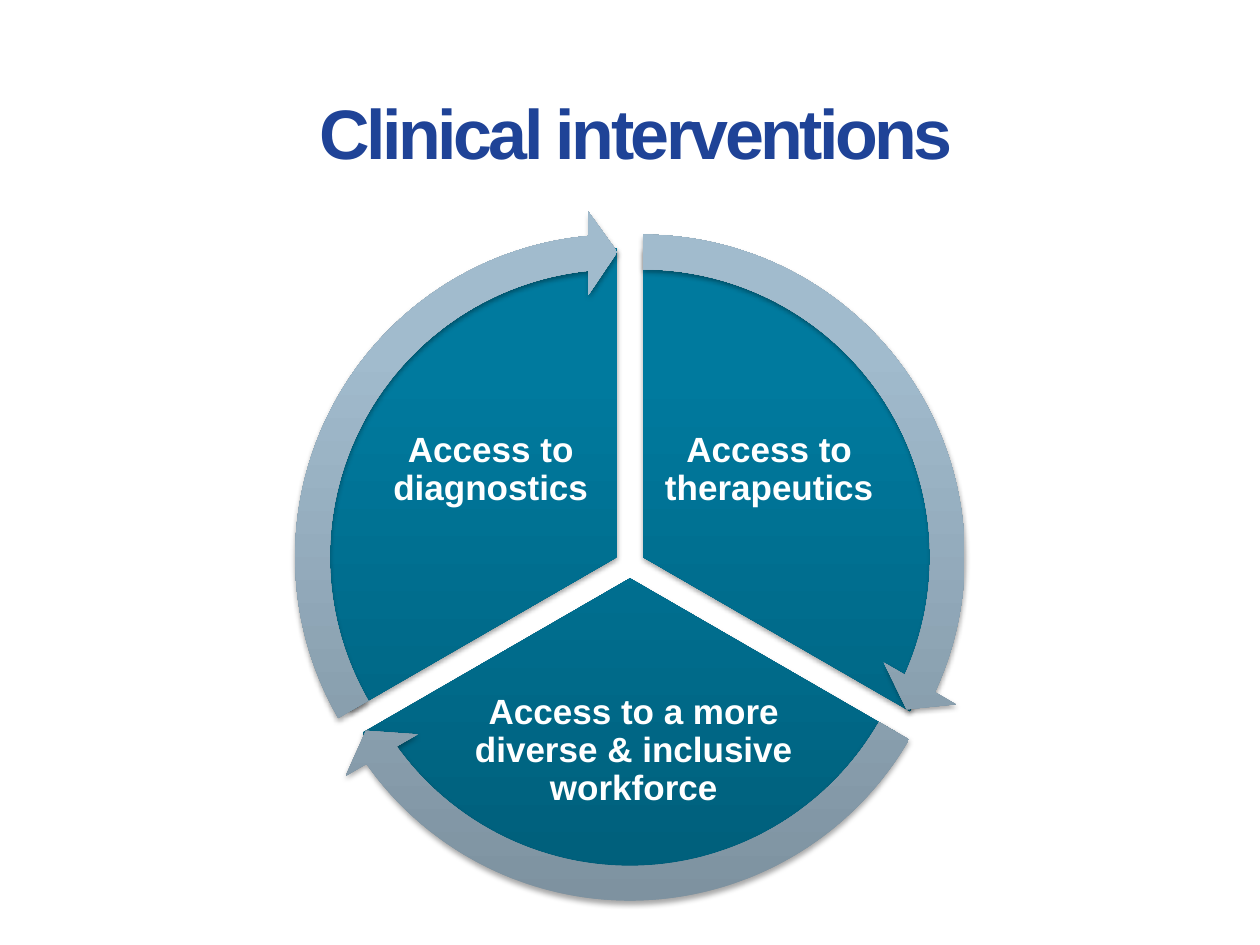
import pptx
import pptx.dml.color
import pptx.enum.shapes
import pptx.enum.text
import pptx.oxml
import pptx.util

Inches, Pt = pptx.util.Inches, pptx.util.Pt
SHAPE = pptx.enum.shapes.MSO_SHAPE
ANCHOR = pptx.enum.text.MSO_ANCHOR
NS = 'xmlns:a="http://schemas.openxmlformats.org/drawingml/2006/main"'

COLORS = {"title": "1F4397", "label": "FFFFFF", "shadow": "000000"}
GRADIENTS = {
    "sector": [(0, "005E7A"), (80, "007A9E"), (100, "007B9F")],
    "arrow": [(0, "7C909E"), (80, "A1BBCD"), (100, "A1BCCF")],
}
TITLE = ("Clinical interventions", (0.08, 0.72, 9.84, 0.69))
# label, label area, centre of the sector, start and end angle in degrees
SECTORS = [
    ("Access to therapeutics", (5.23, 3, 1.75, 1.46), (5.1, 4.42), 270, 30),
    ("Access to a more diverse & inclusive workforce",
     (3.72, 5.32, 2.62, 1.28), (5, 4.59), 30, 150),
    ("Access to diagnostics", (3.02, 3, 1.75, 1.46), (4.9, 4.42), 150, 270),
]
SECTOR_SIZE, ARROW_SIZE = 4.9, 5.5
ARROW_BAND, ARROW_HEAD, HEAD_ANGLE = 0.05, 0.06, 5.46


def angle_value(degrees):
    """Turn degrees into the scale of shape adjustments."""
    return degrees * 0.6


def add_round(shapes, kind, centre, size, adjustments, stops):
    """Add a square-framed shape with an upward gradient and a soft shadow."""
    left, top = (middle - size / 2 for middle in centre)
    shape = shapes.add_shape(kind, Inches(left), Inches(top), Inches(size), Inches(size))
    for index, value in enumerate(adjustments):
        shape.adjustments[index] = value
    shape.line.fill.background()
    shape.shadow.inherit = False
    marks = "".join(f'<a:gs pos="{place * 1000}"><a:srgbClr val="{color}"/></a:gs>'
                    for place, color in stops)
    properties = shape.element.spPr
    properties.insert(2, pptx.oxml.parse_xml(
        f'<a:gradFill {NS} rotWithShape="1"><a:gsLst>{marks}</a:gsLst>'
        '<a:lin ang="16200000" scaled="0"/></a:gradFill>'))
    properties[-1].append(pptx.oxml.parse_xml(
        f'<a:outerShdw {NS} blurRad="{Pt(3.1)}" dist="{Pt(1.8)}" dir="5400000" '
        f'rotWithShape="0"><a:srgbClr val="{COLORS["shadow"]}"><a:alpha val="35000"/>'
        '</a:srgbClr></a:outerShdw>'))


def add_text(shapes, text, area, size, color, anchor, margins, spacing):
    box = shapes.add_textbox(*map(Inches, area))
    frame = box.text_frame
    side, edge = map(Inches, margins)
    settings = {"word_wrap": True, "vertical_anchor": anchor, "margin_left": side,
                "margin_right": side, "margin_top": edge, "margin_bottom": edge}
    for name, value in settings.items():
        setattr(frame, name, value)
    para = frame.paragraphs[0]
    para.alignment = pptx.enum.text.PP_ALIGN.CENTER
    for name, value in spacing.items():
        setattr(para, name, value)
    span = para.add_run()
    span.text = text
    for name, value in {"name": "Arial", "size": Pt(size), "bold": True}.items():
        setattr(span.font, name, value)
    span.font.color.rgb = pptx.dml.color.RGBColor.from_string(color)
    return para


def main():
    deck = pptx.Presentation()
    deck.slide_width, deck.slide_height = Inches(10), Inches(7.5)
    page = deck.slides.add_slide(deck.slide_layouts[6])
    cycle = page.shapes.add_group_shape().shapes

    for label, area, centre, start, end in SECTORS:
        add_round(cycle, SHAPE.PIE, centre, SECTOR_SIZE,
                  (angle_value(start), angle_value(end)), GRADIENTS["sector"])
        add_text(cycle, label, area, 20, COLORS["label"], ANCHOR.MIDDLE,
                 (0.03, 0.03), {"line_spacing": 0.9, "space_after": Pt(7)})
    for _, _, centre, start, end in SECTORS:
        add_round(cycle, SHAPE.CIRCULAR_ARROW, centre, ARROW_SIZE,
                  (ARROW_BAND, angle_value(HEAD_ANGLE), angle_value(end - HEAD_ANGLE),
                   angle_value(start), ARROW_HEAD), GRADIENTS["arrow"])

    text, area = TITLE
    para = add_text(page.shapes, text, area, 40, COLORS["title"], ANCHOR.BOTTOM,
                    (0.07, 0.04), {"line_spacing": 0.8})
    para._p.get_or_add_pPr().set("marL", str(Inches(0.1)))
    para.runs[0].font._element.set("spc", "-200")
    deck.save("out.pptx")


if __name__ == "__main__":
    main()
